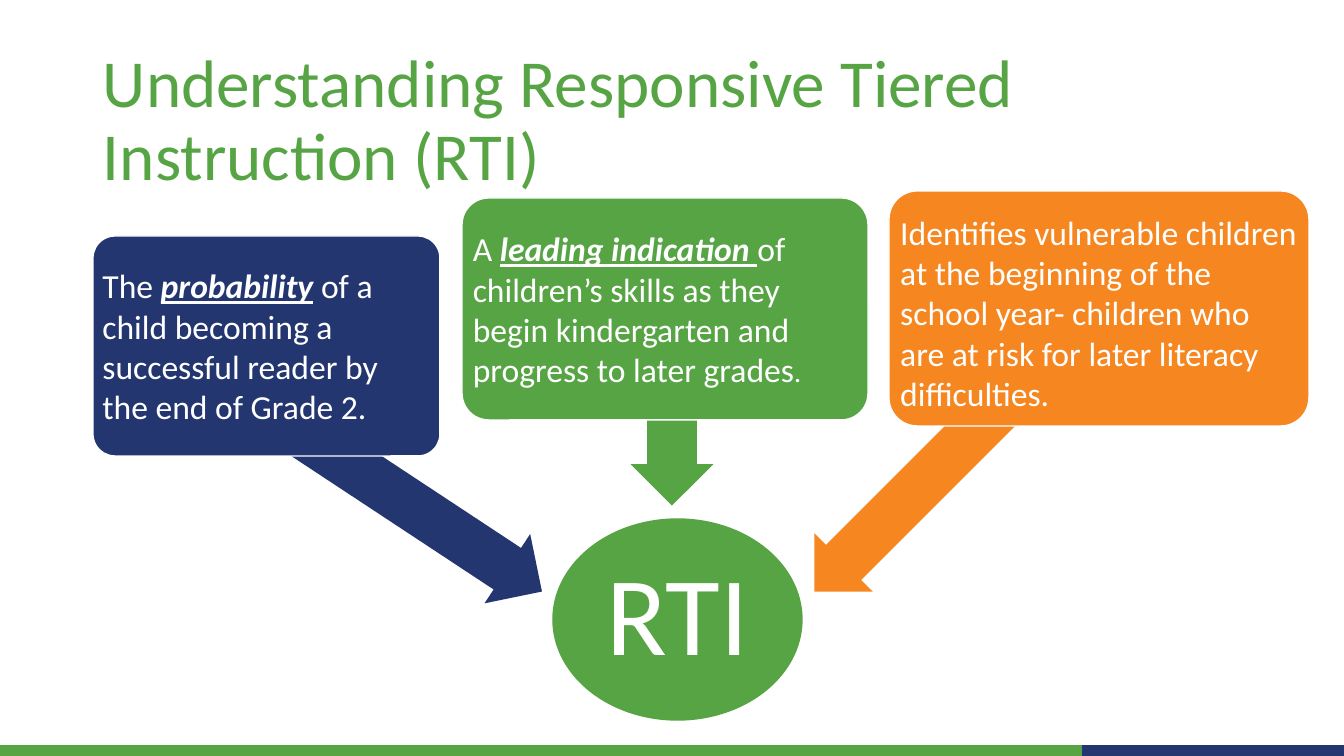
from pptx import Presentation
from pptx.dml.color import RGBColor
from pptx.enum.shapes import MSO_SHAPE
from pptx.enum.text import MSO_ANCHOR, PP_ALIGN
from pptx.util import Pt

EMU_PER_PX = 914400 / 100.8
GREEN, NAVY, ORANGE, WHITE = "57A445", "243670", "F58620", "FFFFFF"
EMPHASIS = {"bold": True, "italic": True, "underline": True}


def px(length):
    """Turn pixels into EMU."""
    return round(length * EMU_PER_PX)


def color(code):
    """Turn a hex string into a colour."""
    return RGBColor.from_string(code)


def add_solid(slide, preset, box, fill, outline=None):
    """Add a flat preset shape in the given box."""
    solid = slide.shapes.add_shape(preset, *map(px, box))
    solid.shadow.inherit = False
    solid.fill.solid()
    solid.fill.fore_color.rgb = color(fill)
    if outline:
        solid.line.color.rgb = color(outline)
        solid.line.width = Pt(1)
    else:
        solid.line.fill.background()
    return solid


def write(holder, runs, size, ink, insets, align=PP_ALIGN.LEFT, spacing=1.0):
    """Write one vertically centred paragraph of formatted runs."""
    frame = holder.text_frame
    left, top, right, bottom = map(px, insets)
    layout = {"word_wrap": True, "vertical_anchor": MSO_ANCHOR.MIDDLE,
              "margin_left": left, "margin_top": top,
              "margin_right": right, "margin_bottom": bottom}
    for key, value in layout.items():
        setattr(frame, key, value)
    paragraph = frame.paragraphs[0]
    paragraph.alignment = align
    paragraph.line_spacing = spacing
    for words, extras in runs:
        run = paragraph.add_run()
        run.text = words
        run.font.color.rgb = color(ink)
        for key, value in ({"name": "Calibri", "size": Pt(size)} | extras).items():
            setattr(run.font, key, value)


def add_footer(slide, box):
    """Fill the footer band with one long green bar and two navy ones."""
    left, top, width, height = box
    end = 131
    green_width = width - 2 * end
    for index in range(2):
        add_solid(slide, MSO_SHAPE.RECTANGLE,
                  (left + green_width + index * end, top, end, height), NAVY)
    add_solid(slide, MSO_SHAPE.RECTANGLE, (left, top, green_width, height), GREEN)


def add_title(slide, box):
    """Add the slide title."""
    title = slide.shapes.add_textbox(*map(px, box))
    write(title, [("Understanding Responsive Tiered Instruction (RTI)", {})],
          48, GREEN, (10, 5, 10, 5), spacing=0.9)


def add_hub(slide, box):
    """Add the central RTI circle."""
    hub = add_solid(slide, MSO_SHAPE.OVAL, box, GREEN, GREEN)
    write(hub, [("RTI", {})], 80, WHITE, (4, 4, 4, 4), PP_ALIGN.CENTER, 0.9)


def add_reason(slide, box, fill, runs, insets, corner, arrow_center, arrow_length, angle):
    """Add a card and, behind it, an arrow centred relative to the card's corner."""
    left, top = box[:2]
    across, down = arrow_center
    thickness = 83
    arrow = add_solid(slide, MSO_SHAPE.LEFT_ARROW,
                      (left + across - arrow_length / 2, top + down - thickness / 2,
                       arrow_length, thickness), fill)
    arrow.rotation = angle
    arrow.adjustments[0] = 0.6
    arrow.adjustments[1] = 0.5
    card = add_solid(slide, MSO_SHAPE.ROUNDED_RECTANGLE, box, fill, WHITE)
    card.adjustments[0] = corner
    write(card, runs, 24, WHITE, insets)


def main():
    """Build and save the slide."""
    deck = Presentation()
    deck.slide_width, deck.slide_height = px(1344), px(756)
    slide = deck.slides.add_slide(deck.slide_layouts[6])
    add_footer(slide, (0, 745, 1344, 11))
    add_title(slide, (93, 49, 1159, 146))
    add_hub(slide, (553, 519, 249, 201))

    probability = [("The ", {}), ("probability", EMPHASIS),
                   (" of a child becoming a successful reader by the end of Grade 2.", {})]
    indication = [("A ", {}), ("leading indication ", EMPHASIS),
                  ("of children’s skills as they begin kindergarten and "
                   "progress to later grades", {}), (".", {"size": Pt(20)})]
    vulnerable = [("Identifies vulnerable children at the beginning of the school year- "
                   "children who are at risk for later literacy difficulties.", {})]
    add_reason(slide, (93, 236, 347, 220), NAVY, probability, (3, 3, 3, 3),
               0.1, (292, 252), 376, 213.4)
    add_reason(slide, (462, 198, 406, 222), GREEN, indication, (3, 3, 3, 3),
               0.12, (210, 192), 231, 270)
    add_reason(slide, (889, 191, 420, 235), ORANGE, vulnerable, (3, 11, 3, 3),
               0.12, (60, 266), 381, 315)
    deck.save("out.pptx")


if __name__ == "__main__":
    main()
